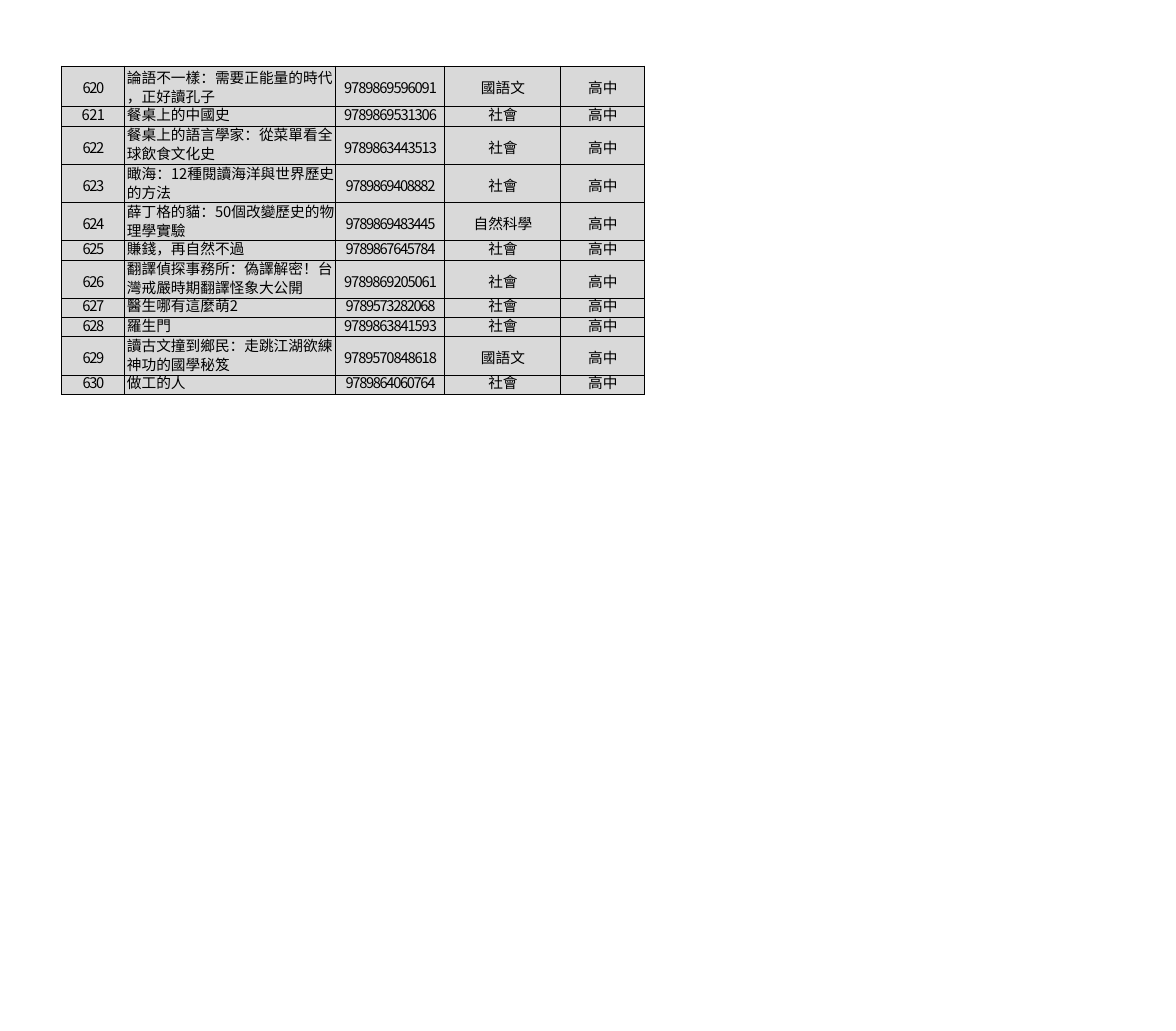
"""Build a one-slide book list table with number, title, ISBN, subject and school level."""
from dataclasses import dataclass

from lxml import etree
from pptx import Presentation
from pptx.dml.color import RGBColor
from pptx.enum.text import PP_ALIGN
from pptx.oxml.ns import qn
from pptx.util import Pt

LEFT, CENTER = PP_ALIGN.LEFT, PP_ALIGN.CENTER


@dataclass(frozen=True)
class Theme:
    font: str = "Noto Sans CJK SC"
    size: float = 12
    text: str = "000000"
    fill: str = "D9D9D9"
    border: str = "000000"
    border_width: float = 1


theme = Theme()

LEVEL = "高中"
SINGLE_LINE, DOUBLE_LINE = 14.1, 15.6
SINGLE_HEIGHT, DOUBLE_HEIGHT = 15.75, 31
SINGLE_GAP, DOUBLE_GAP, FIRST_GAP = 0.5, 8.2, 8.3
COLUMN_WIDTHS = [51, 172.8, 88.6, 95, 68.4]
COLUMN_ALIGNMENTS = [CENTER, LEFT, CENTER, CENTER, LEFT]
COLUMN_INDENTS = [0.7, 2.2, 0.7, 0.7, 22.3]

# number, title, ISBN, subject, line count, number spacing, ISBN spacing
books = [
    ("620", "論語不一樣：需要正能量的時代\n，正好讀孔子", "9789869596091", "國語文", 2, -1.1, -0.9),
    ("621", "餐桌上的中國史", "9789869531306", "社會", 1, -0.4, -0.9),
    ("622", "餐桌上的語言學家：從菜單看全 球飲食文化史", "9789863443513", "社會", 2, -1.1, -0.9),
    ("623", "瞰海：12種閱讀海洋與世界歷史 的方法", "9789869408882", "社會", 2, -1.1, -1.1),
    ("624", "薛丁格的貓：50個改變歷史的物 理學實驗", "9789869483445", "自然科學", 2, -1.1, -1.1),
    ("625", "賺錢，再自然不過", "9789867645784", "社會", 1, -1.1, -1.1),
    ("626", "翻譯偵探事務所：偽譯解密！台 灣戒嚴時期翻譯怪象大公開", "9789869205061", "社會", 2, -1.1, -0.9),
    ("627", "醫生哪有這麼萌2", "9789573282068", "社會", 1, -1, -1.1),
    ("628", "羅生門", "9789863841593", "社會", 1, -1.1, -0.9),
    ("629", "讀古文撞到鄉民：走跳江湖欲練 神功的國學秘笈", "9789570848618", "國語文", 2, -1.1, -0.9),
    ("630", "做工的人", "9789864060764", "社會", 1, -1.1, -1.1),
]


def style_cell(cell, gap):
    """Set the margins, borders and fill of a cell."""
    cell.margin_left = cell.margin_right = cell.margin_bottom = Pt(0)
    cell.margin_top = Pt(gap)
    properties = cell._tc.get_or_add_tcPr()
    for side in ("lnL", "lnR", "lnT", "lnB"):
        line = etree.SubElement(properties, qn(f"a:{side}"), w=str(Pt(theme.border_width)))
        solid = etree.SubElement(line, qn("a:solidFill"))
        etree.SubElement(solid, qn("a:srgbClr"), val=theme.border)
    cell.fill.solid()
    cell.fill.fore_color.rgb = RGBColor.from_string(theme.fill)


def style_paragraph(paragraph, column, gap, line_height, spacing):
    """Set the layout, font and letter spacing of a paragraph."""
    paragraph.alignment = COLUMN_ALIGNMENTS[column]
    paragraph.space_before = Pt(gap)
    if line_height:
        paragraph.line_spacing = Pt(line_height)
    font = paragraph.font
    font.name = theme.font
    font.size = Pt(theme.size)
    font.color.rgb = RGBColor.from_string(theme.text)
    properties = paragraph._p.get_or_add_pPr()
    properties.set("marL", str(Pt(COLUMN_INDENTS[column])))
    properties.set("indent", "0")
    for run in paragraph.runs:
        run_properties = run._r.get_or_add_rPr()
        run_properties.set("spc", str(round(spacing * 100)))
        etree.SubElement(run_properties, qn("a:ea"), typeface=theme.font)


presentation = Presentation()
presentation.slide_width = Pt(960)
presentation.slide_height = Pt(841.7)
slide = presentation.slides.add_slide(presentation.slide_layouts[6])

heights = [DOUBLE_HEIGHT if book[4] == 2 else SINGLE_HEIGHT for book in books]
table = slide.shapes.add_table(
    len(books), len(COLUMN_WIDTHS), Pt(50.4), Pt(54), Pt(sum(COLUMN_WIDTHS)), Pt(sum(heights))
).table
table.first_row = table.horz_banding = False
for column, width in zip(table.columns, COLUMN_WIDTHS):
    column.width = Pt(width)

for row_index, (number, title, isbn, subject, lines, number_spacing, isbn_spacing) in enumerate(books):
    table.rows[row_index].height = Pt(heights[row_index])
    values = [number, title, isbn, subject, LEVEL]
    spacings = [number_spacing, 0, isbn_spacing, 0, 0]
    for column_index, (value, spacing) in enumerate(zip(values, spacings)):
        gap, line_height = SINGLE_GAP, SINGLE_LINE
        if lines == 2:
            gap, line_height = (DOUBLE_GAP if row_index else FIRST_GAP), None
            if column_index == 1:
                gap, line_height = (0, DOUBLE_LINE) if row_index else (SINGLE_GAP, None)
        cell = table.cell(row_index, column_index)
        cell.text = value
        style_cell(cell, gap)
        first, *others = cell.text_frame.paragraphs
        style_paragraph(first, column_index, gap, line_height, spacing)
        for paragraph in others:
            style_paragraph(paragraph, column_index, 1.2, SINGLE_LINE, spacing)

presentation.save("out.pptx")
